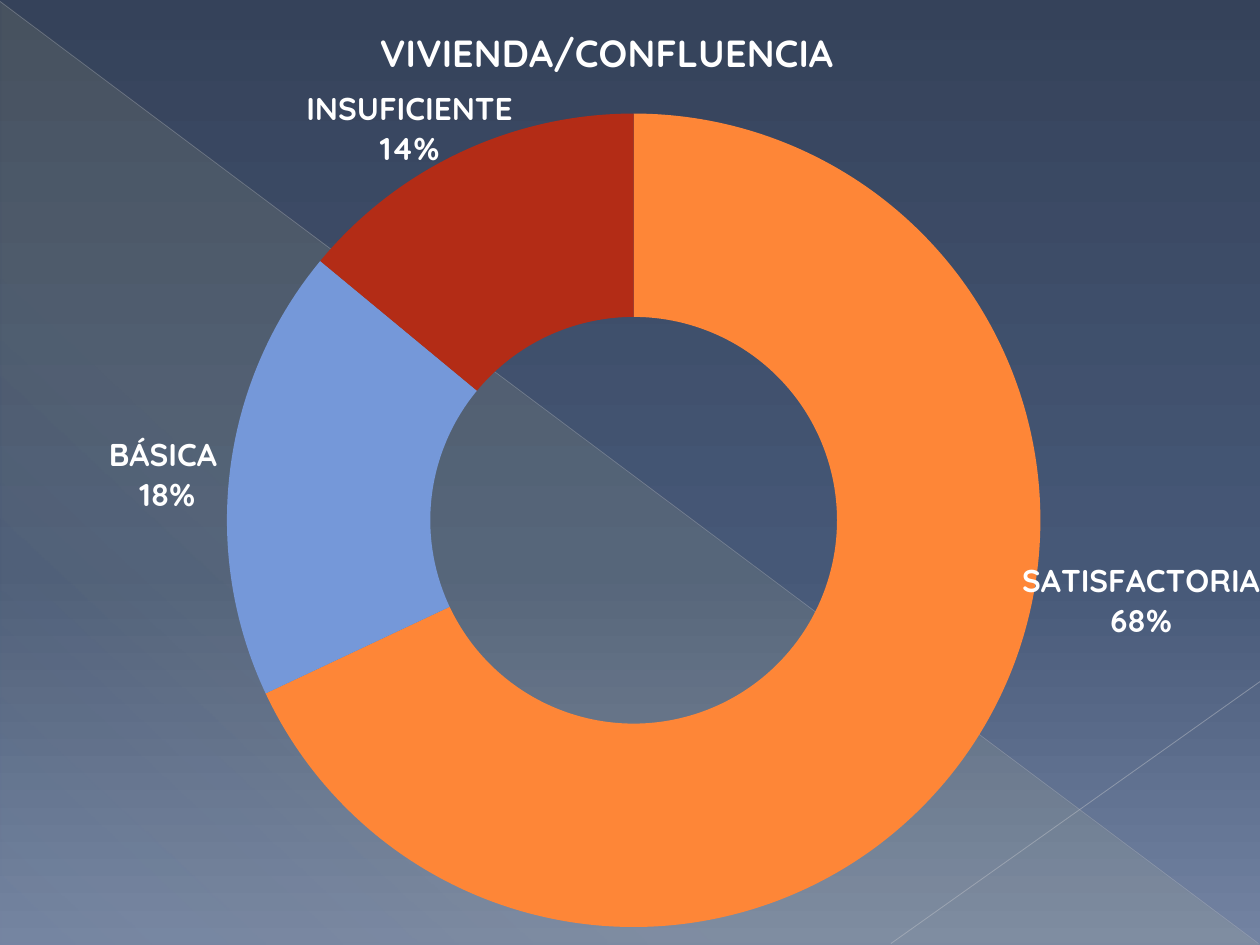
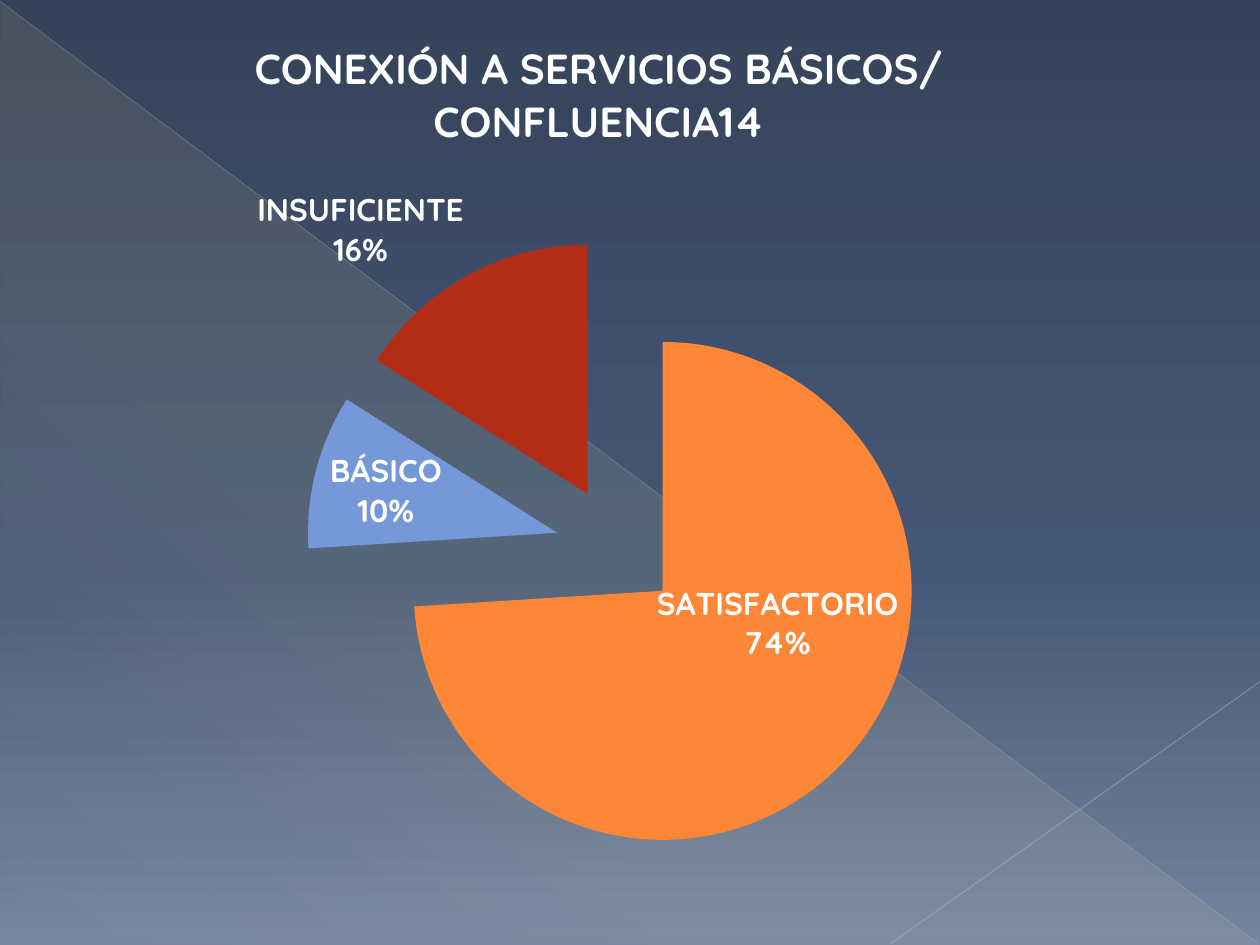
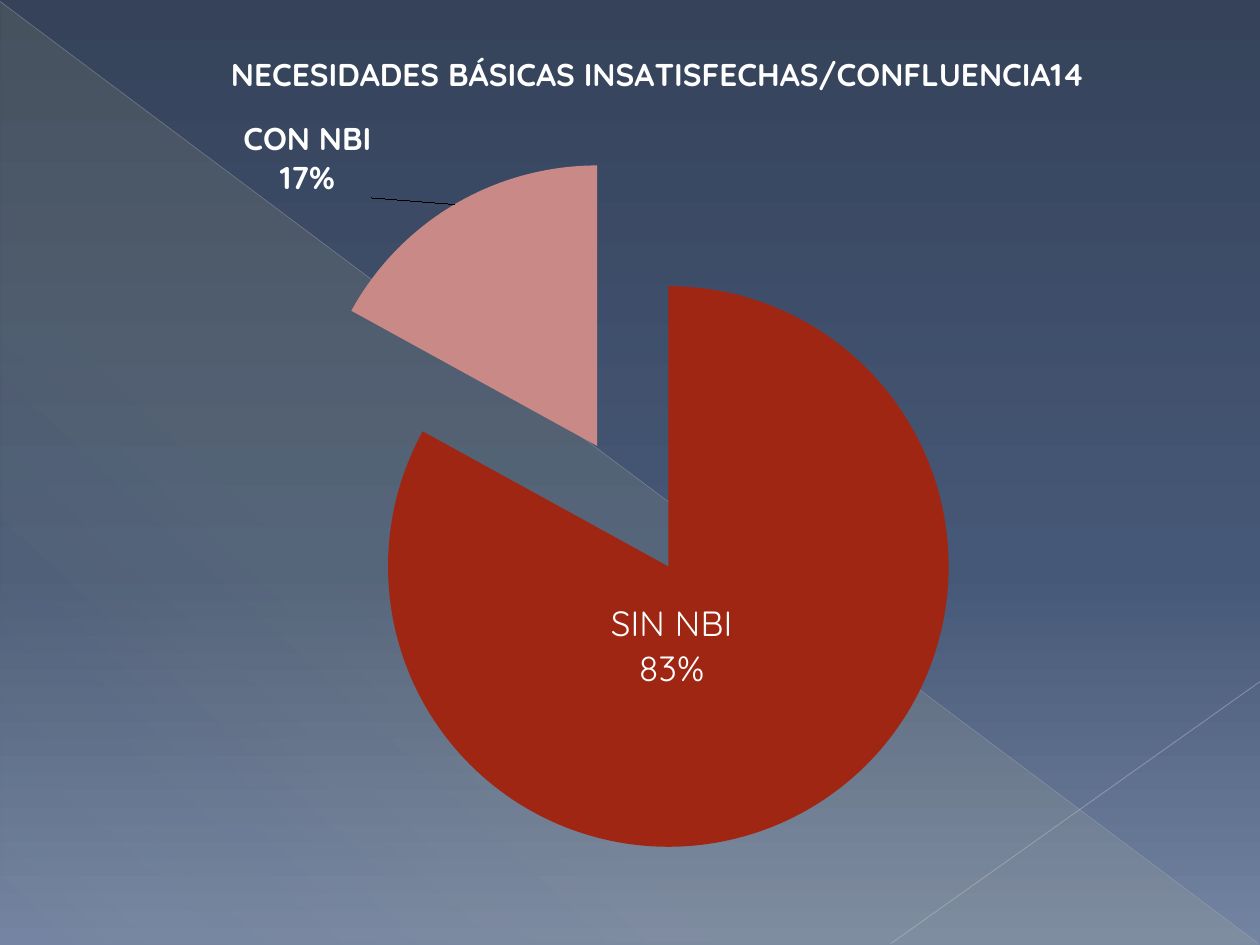
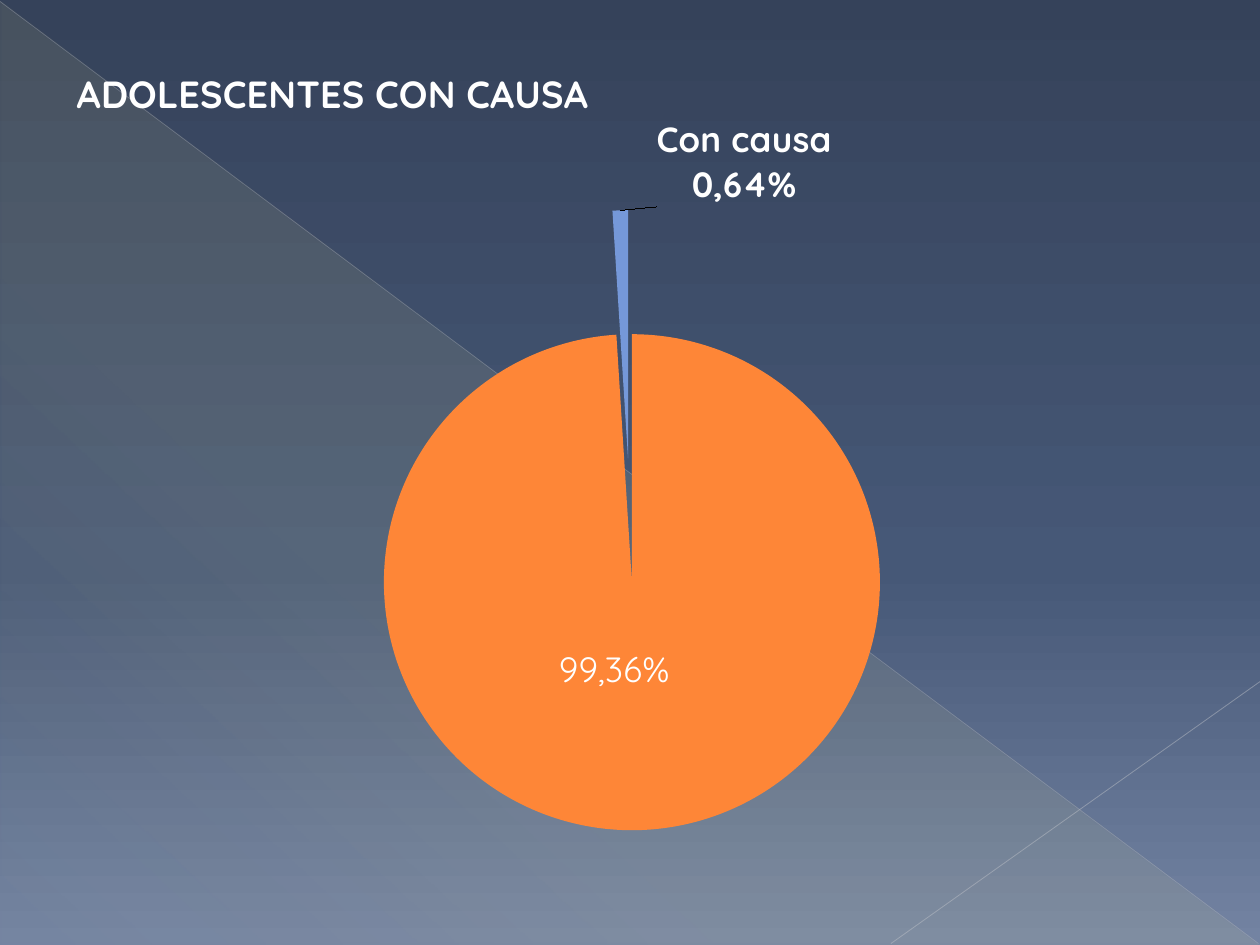
from lxml.etree import SubElement
from pptx import Presentation
from pptx.chart.data import CategoryChartData
from pptx.dml.color import RGBColor
from pptx.enum.chart import XL_CHART_TYPE, XL_LABEL_POSITION
from pptx.enum.shapes import MSO_CONNECTOR, MSO_SHAPE
from pptx.oxml import parse_xml
from pptx.oxml.ns import nsdecls, qn
from pptx.util import Cm, Pt

FONT = "Quicksand"
WIDTH, HEIGHT = Cm(25.4), Cm(19.05)
COLORS = {
    "white": "FFFFFF",
    "night": "35425A",
    "blue": "465877",
    "haze": "7383A2",
    "glow": "FFF39D",
    "diagonal": "BABDC4",
    "corner": "C1C4CA",
    "orange": "FE8637",
    "sky": "7598D9",
    "red": "B32C16",
    "brick": "A02614",
    "rose": "C98A87",
}


def rgb(name):
    return RGBColor.from_string(COLORS[name])


def set_alpha(color, percent):
    SubElement(color, qn("a:alpha")).set("val", str(percent * 1000))


def set_gradient(fill, element, stops, angle):
    fill.gradient()
    grad = element.find(".//" + qn("a:gradFill"))
    gs_list = grad.find(qn("a:gsLst"))
    for gs in list(gs_list):
        gs_list.remove(gs)
    for position, name, alpha in stops:
        gs = SubElement(gs_list, qn("a:gs"))
        gs.set("pos", str(position * 1000))
        color = SubElement(gs, qn("a:srgbClr"))
        color.set("val", COLORS[name])
        set_alpha(color, alpha)
    grad.find(qn("a:lin")).set("ang", str(angle * 60000))


def add_glow(slide):
    sp = slide.shapes.add_shape(
        MSO_SHAPE.RIGHT_TRIANGLE, Cm(0.01), Cm(0.04), Cm(25.37), Cm(19))
    sp.shadow.inherit = False
    sp.line.fill.background()
    set_gradient(sp.fill, sp.element,
                 [(0, "glow", 10), (70, "glow", 8), (100, "glow", 1)], 133)
    return sp


def add_line(slide, start, end, color, width, alpha):
    line = slide.shapes.add_connector(
        MSO_CONNECTOR.STRAIGHT, *(Cm(v) for v in start + end))
    line.line.color.rgb = rgb(color)
    line.line.width = Pt(width)
    set_alpha(line.element.find(".//" + qn("a:srgbClr")), alpha)
    SubElement(line.element.spPr, qn("a:effectLst"))
    return line


def decorate_master(prs, slide):
    master = prs.slide_master
    set_gradient(master.background.fill, master.element,
                 [(0, "night", 100), (60, "blue", 100), (100, "haze", 100)], 90)
    decor = [
        add_glow(slide),
        add_line(slide, (0, 0.03), (25.37, 19.02), "diagonal", 0.39, 35),
        add_line(slide, (25.4, 13.74), (17.96, 19.02), "corner", 0.47, 45),
    ]
    tree = master.shapes.element
    for number, sp in enumerate(decor):
        sp.element.find(".//" + qn("p:cNvPr")).set("id", str(100 + number))
        tree.insert(2 + number, sp.element)


def manual_layout(x, y, w=None, h=None, edge=True):
    target = '<c:layoutTarget val="inner"/>' if w else ""
    modes = '<c:xMode val="edge"/><c:yMode val="edge"/>' if edge else ""
    size = (f'<c:w val="{Cm(w) / WIDTH}"/><c:h val="{Cm(h) / HEIGHT}"/>'
            if w else "")
    return parse_xml(
        f'<c:layout {nsdecls("c")}><c:manualLayout>{target}{modes}'
        f'<c:x val="{Cm(x) / WIDTH}"/><c:y val="{Cm(y) / HEIGHT}"/>{size}'
        '</c:manualLayout></c:layout>')


def replace_layout(parent, layout, index):
    old = parent.find(qn("c:layout"))
    if old is not None:
        parent.remove(old)
    parent.insert(index, layout)


def style_font(font, size, bold):
    font.name = FONT
    font.size = Pt(size)
    font.bold = bold
    font.color.rgb = rgb("white")


def set_title(chart, text, size, position):
    title = chart.chart_title
    title.text_frame.text = text
    style_font(title.text_frame.paragraphs[0].runs[0].font, size, True)
    title.include_in_layout = False
    replace_layout(title.element, manual_layout(*position), 1)


def break_lines(labels):
    separator = labels.makeelement(qn("c:separator"))
    separator.text = "\n"
    labels.find(qn("c:showBubbleSize")).addnext(separator)


def set_label(point, offset, text=None, size=18, bold=True, centred=True):
    label = point.data_label
    if text:
        label.text_frame.text = text
        for p in label.text_frame.paragraphs:
            style_font(p.runs[0].font, size, bold)
    else:
        style_font(label.font, size, bold)
    if centred:
        label.position = XL_LABEL_POSITION.CENTER
    dLbl = label._dLbl
    for tag, shown in (("showVal", "0"), ("showCatName", "1"), ("showPercent", "1")):
        dLbl.find(qn("c:" + tag)).set("val", shown)
    replace_layout(dLbl, manual_layout(*offset, edge=False), 1)
    break_lines(dLbl)


def add_pie(slide, title, title_size, title_at, plot_at, slices,
            labels=(), doughnut=False):
    data = CategoryChartData()
    data.categories = [name for name, value, color in slices]
    data.add_series("Series 1", [value for name, value, color in slices])
    kind = XL_CHART_TYPE.DOUGHNUT if doughnut else XL_CHART_TYPE.PIE
    chart = slide.shapes.add_chart(kind, 0, 0, WIDTH, HEIGHT, data).chart
    chart.has_legend = False
    style_font(chart.font, 18, False)
    set_title(chart, title, title_size, title_at)
    replace_layout(chart.element.find(".//" + qn("c:plotArea")),
                   manual_layout(*plot_at), 0)

    plot = chart.plots[0]
    plot.vary_by_categories = True
    series = plot.series[0]
    ser = chart.element.find(".//" + qn("c:ser"))
    if not doughnut:
        ser.find(qn("c:tx")).addnext(
            ser.makeelement(qn("c:explosion"), {"val": "25"}))
    for i, (name, value, color) in enumerate(slices):
        fmt = series.points[i].format
        fmt.fill.solid()
        fmt.fill.fore_color.rgb = rgb(color)
        fmt.line.fill.background()

    all_labels = series.data_labels
    all_labels.show_percentage = True
    all_labels.show_category_name = True
    all_labels.show_value = False
    style_font(all_labels.font, 18, True)
    if not doughnut:
        all_labels.position = XL_LABEL_POSITION.BEST_FIT
    dLbls = ser.find(qn("c:dLbls"))
    break_lines(dLbls)
    leader = dLbls.find(qn("c:showLeaderLines"))
    if leader is not None:
        leader.set("val", "0" if doughnut else "1")
    for i, label in enumerate(labels):
        set_label(series.points[i], centred=not doughnut, **label)


def main():
    prs = Presentation()
    prs.slide_width, prs.slide_height = WIDTH, HEIGHT
    blank = prs.slide_layouts[6]
    housing, services, needs, teens = (
        prs.slides.add_slide(blank) for _ in range(4))
    decorate_master(prs, housing)

    add_pie(housing, "VIVIENDA/CONFLUENCIA", 21.6, (7.52, 0.37),
            (4.57, 2.29, 16.41, 16.4),
            [("SATISFACTORIA", 68, "orange"), ("BÁSICA ", 18, "sky"),
             ("INSUFICIENTE", 14, "red")],
            [{"offset": (5.08, -1.67)}, {"offset": (-3.3, -0.15)},
             {"offset": (-1.9, -2.33)}],
            doughnut=True)
    add_pie(services, "CONEXIÓN A SERVICIOS BÁSICOS/ CONFLUENCIA14", 24,
            (4.98, 0.61), (6.17, 4.78, 12.55, 12.55),
            [("SATISFACTORIO", 74, "orange"), ("BÁSICO", 10, "sky"),
             ("INSUFICIENTE", 16, "red")])
    add_pie(needs, "NECESIDADES BÁSICAS INSATISFECHAS/CONFLUENCIA14", 18,
            (4.54, 0.92), (5.69, 3.13, 14.13, 14.15),
            [("SIN NBI", 83, "brick"), ("CON NBI", 17, "rose")],
            [{"offset": (-1.37, -0.83), "text": "SIN NBI\n83%",
              "size": 20, "bold": False},
             {"offset": (-4.4, -3.36)}])
    add_pie(teens, "ADOLESCENTES CON CAUSA", 21.6, (1.41, 1.19),
            (6.45, 4.23, 12.5, 12.52),
            [("Total adolescentes", 99, "orange"), ("Con causa", 1, "sky")],
            [{"offset": (-0.43, -0.74), "text": "99,36%",
              "size": 20, "bold": False},
             {"offset": (2.42, -3.47), "text": "Con causa\n0,64%",
              "size": 20}])
    prs.save("out.pptx")


if __name__ == "__main__":
    main()
